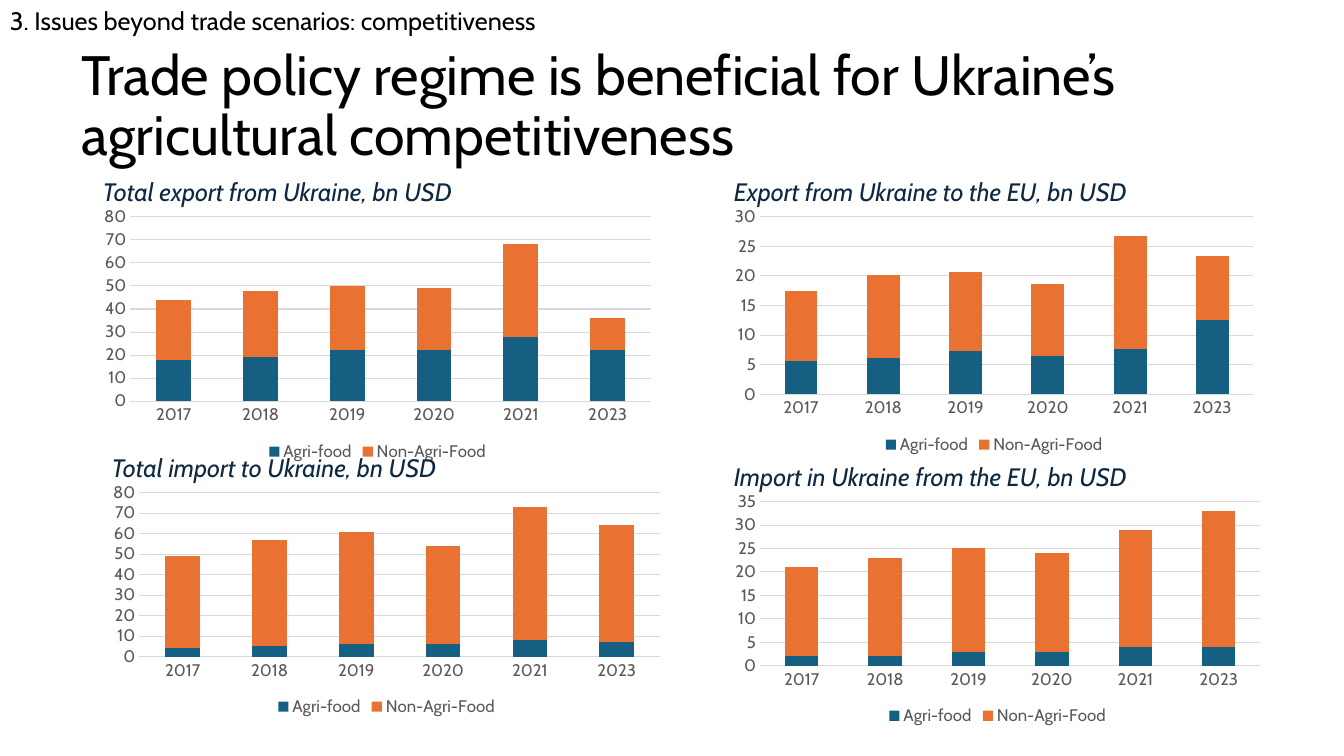
import pptx
import pptx.chart.data
import pptx.dml.color
import pptx.enum.chart
import pptx.enum.text
import pptx.util

# Content
SECTION = "3. Issues beyond trade scenarios: competitiveness"
TITLE = "Trade policy regime is beneficial for Ukraine’s agricultural competitiveness"
YEARS = ["2017", "2018", "2019", "2020", "2021", "2023"]
SERIES = [("Agri-food", "156082"), ("Non-Agri-Food", "E97132")]
# caption, (left, top, width, height) of the chart, axis maximum, axis step, values
PANELS = [
    ("Total export from Ukraine, bn USD", (0.92, 2, 5.65, 2.62), 80, 10,
     [(18, 19, 22, 22, 28, 22), (26, 29, 28, 27, 40, 14)]),
    ("Export from Ukraine to the EU, bn USD", (7.18, 2, 5.36, 2.55), 30, 5,
     [(5.6, 6.1, 7.3, 6.5, 7.7, 12.5), (11.9, 14, 13.4, 12.1, 19.1, 10.9)]),
    ("Total import to Ukraine, bn USD", (1.01, 4.74, 5.65, 2.41), 80, 10,
     [(4, 5, 6, 6, 8, 7), (45, 52, 55, 48, 65, 57)]),
    ("Import in Ukraine from the EU, bn USD", (7.18, 4.83, 5.43, 2.41), 35, 5,
     [(2, 2, 3, 3, 4, 4), (19, 21, 22, 21, 25, 29)]),
]

# Format
FONT = "Cabin"
WIDTH, HEIGHT = 13.33, 7.5
BLACK, NAVY, GRAY, RULE = "000000", "0E2841", "595959", "D9D9D9"
CAPTION_RISE, CAPTION_HEIGHT = 0.3, 0.4
ANCHOR = pptx.enum.text.MSO_ANCHOR
ALIGN = pptx.enum.text.PP_ALIGN
CHART = pptx.enum.chart


def rgb(value):
    return pptx.dml.color.RGBColor.from_string(value)


def inches(*values):
    return [pptx.util.Inches(v) for v in values]


def set_all(obj, values):
    for name, value in values.items():
        setattr(obj, name, value)


def set_font(font, size, color, italic=False):
    set_all(font, {"name": FONT, "size": pptx.util.Pt(size), "italic": italic})
    font.color.rgb = rgb(color)


def set_line(line, color):
    line.color.rgb = rgb(color)
    line.width = pptx.util.Pt(0.75)


def add_text(slide, text, box, size, color, italic=False, frame=None, para=None):
    tf = slide.shapes.add_textbox(*inches(*box)).text_frame
    set_all(tf, {"word_wrap": True, **(frame or {})})
    p = tf.paragraphs[0]
    set_all(p, para or {})
    r = p.add_run()
    r.text = text
    set_font(r.font, size, color, italic)


def add_stacked_chart(slide, box, maximum, step, rows):
    data = pptx.chart.data.CategoryChartData()
    data.categories = YEARS
    for (name, _), values in zip(SERIES, rows):
        data.add_series(name, values)
    chart = slide.shapes.add_chart(
        CHART.XL_CHART_TYPE.COLUMN_STACKED, *inches(*box), data).chart
    set_all(chart, {"has_title": False, "has_legend": True})
    set_font(chart.font, 12, BLACK)

    # Legend
    set_all(chart.legend, {"position": CHART.XL_LEGEND_POSITION.BOTTOM,
                           "include_in_layout": False})
    set_font(chart.legend.font, 12, GRAY)

    # Columns
    plot = chart.plots[0]
    set_all(plot, {"gap_width": 150, "overlap": 100, "vary_by_categories": False})
    for series, (_, color) in zip(plot.series, SERIES):
        series.format.fill.solid()
        series.format.fill.fore_color.rgb = rgb(color)

    # Axes
    for axis in (chart.category_axis, chart.value_axis):
        set_all(axis, {"major_tick_mark": CHART.XL_TICK_MARK.NONE,
                       "minor_tick_mark": CHART.XL_TICK_MARK.NONE})
        set_font(axis.tick_labels.font, 12, GRAY)
    set_line(chart.category_axis.format.line, RULE)
    axis = chart.value_axis
    set_all(axis, {"minimum_scale": 0, "maximum_scale": maximum,
                   "major_unit": step, "has_major_gridlines": True})
    axis.format.line.fill.background()
    set_line(axis.major_gridlines.format.line, RULE)


def main():
    prs = pptx.Presentation()
    prs.slide_width, prs.slide_height = inches(WIDTH, HEIGHT)
    slide = prs.slides.add_slide(prs.slide_layouts[6])

    # Headings
    add_text(slide, TITLE, (0.71, 0.46, 11.5, 1.22), 39.6, BLACK,
             frame={"vertical_anchor": ANCHOR.MIDDLE}, para={"line_spacing": 0.9})
    add_text(slide, SECTION, (0, 0, 9.8, 0.4), 18, BLACK)

    # Charts, then the captions above them
    for _, box, maximum, step, rows in PANELS:
        add_stacked_chart(slide, box, maximum, step, rows)
    for caption, (left, top, _, _), *_ in PANELS:
        add_text(slide, caption, (left, top - CAPTION_RISE, WIDTH / 2, CAPTION_HEIGHT),
                 18, NAVY, italic=True,
                 para={"alignment": ALIGN.JUSTIFY, "space_after": pptx.util.Pt(10)})

    prs.save("out.pptx")


if __name__ == "__main__":
    main()
